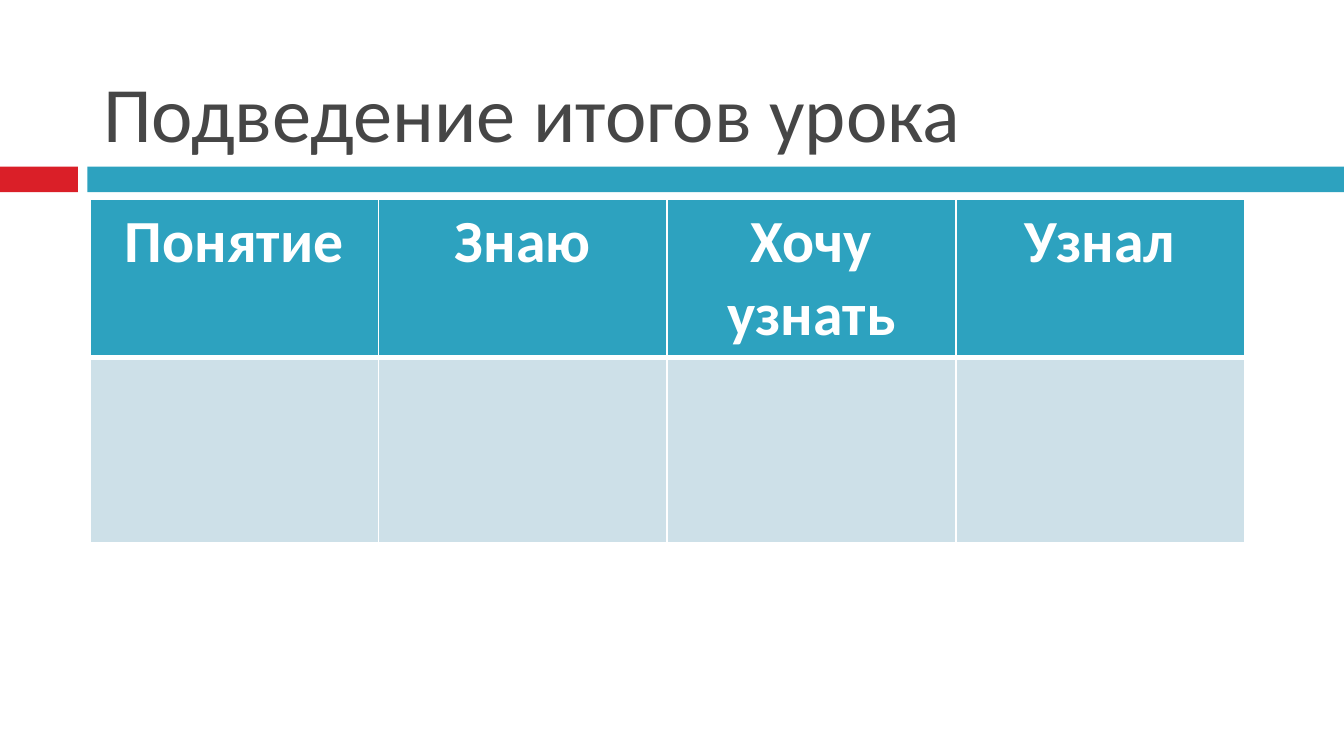
from dataclasses import dataclass
from lxml.etree import SubElement as Sub
from pptx import Presentation
from pptx.dml.color import RGBColor as Rgb
from pptx.enum.shapes import MSO_SHAPE as Kind
from pptx.enum.text import MSO_ANCHOR as Anchor, PP_ALIGN as Align
from pptx.oxml.ns import qn
from pptx.util import Inches as In, Pt

# Content
TITLE = "Подведение итогов урока"
ROWS = [
    ["Понятие", "Знаю", "Хочу узнать", "Узнал"],
    [""] * 4,
]


@dataclass(frozen=True)
class Theme:
    font: str = "Calibri"
    ink: str = "464646"
    teal: str = "2DA2BF"
    red: str = "DA1F28"
    pale: str = "CDE0E8"
    white: str = "FFFFFF"
    title: int = 42
    head: int = 32
    thin: int = 1
    thick: int = 3


T = Theme()

# Layout in inches, on a 16:9 slide
WIDE = 10
HIGH = WIDE * 9 / 16
LEFT = 0.67
BAR_Y, BAR_H = 1.24, 0.19
BARS = [(0, 0.58, T.red), (0.65, WIDE - 0.65, T.teal)]
GRID_Y, GRID_W = 1.48, 8.59
HEIGHTS = [1.18, 1.38]


def write(frame, text, size=T.head, color=T.white, bold=False, align=Align.LEFT):
    para = frame.paragraphs[0]
    para.alignment = align
    run = para.add_run()
    run.text = text
    font = run.font
    font.name, font.size, font.bold = T.font, Pt(size), bold
    font.color.rgb = Rgb.from_string(color)


def paint(fill, color):
    fill.solid()
    fill.fore_color.rgb = Rgb.from_string(color)


def edge(cell, **widths):
    props = cell._tc.get_or_add_tcPr()
    for side in "LRTB":
        line = Sub(props, qn("a:ln" + side), w=str(Pt(widths.get(side, T.thin))))
        Sub(Sub(line, qn("a:solidFill")), qn("a:srgbClr"), val=T.white)


deck = Presentation()
deck.slide_width, deck.slide_height = In(WIDE), In(HIGH)
slide = deck.slides.add_slide(deck.slide_layouts[6])
shapes = slide.shapes

# Divider bars
for x, w, color in BARS:
    bar = shapes.add_shape(Kind.RECTANGLE, In(x), In(BAR_Y), In(w), In(BAR_H))
    bar.shadow.inherit = False
    bar.line.fill.background()
    paint(bar.fill, color)

# Title
frame = shapes.add_textbox(In(LEFT), In(0.13), In(8.92), In(1.1)).text_frame
frame.word_wrap = True
frame.vertical_anchor = Anchor.BOTTOM
write(frame, TITLE, size=T.title, color=T.ink)

# Table: equal columns, heading row above an empty row
grid = shapes.add_table(len(ROWS), len(ROWS[0]), In(LEFT), In(GRID_Y),
                        In(GRID_W), In(sum(HEIGHTS))).table
for r, row in enumerate(ROWS):
    grid.rows[r].height = In(HEIGHTS[r])
    for c, text in enumerate(row):
        cell = grid.cell(r, c)
        edge(cell, **({"T": T.thick} if r else {"B": T.thick}))
        paint(cell.fill, T.pale if r else T.teal)
        if text:
            write(cell.text_frame, text, bold=True, align=Align.CENTER)

deck.save("out.pptx")
